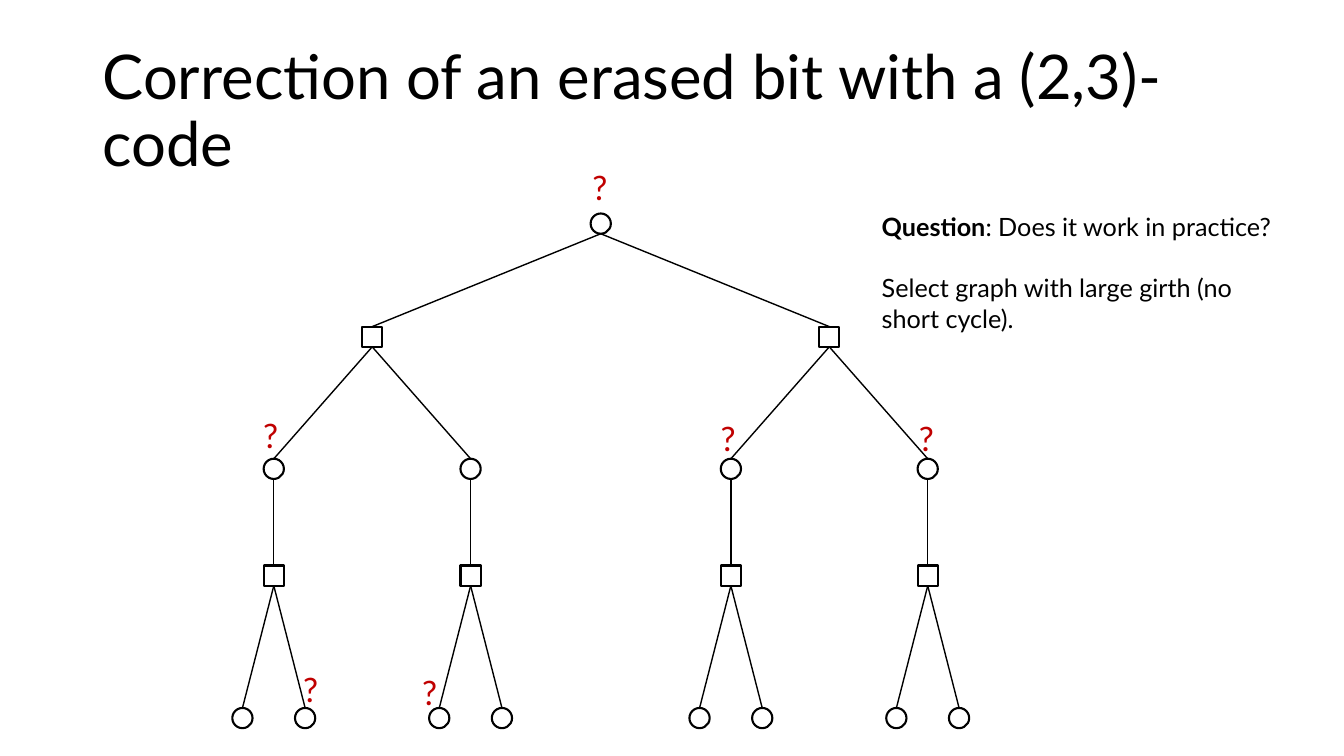
from lxml import etree
from pptx import Presentation
from pptx import util as u
from pptx.dml.color import RGBColor
from pptx.enum import shapes, text
from pptx.oxml.ns import qn

FONT = "Lato"
BLACK, WHITE, RED = "000000", "FFFFFF", "C00000"
NODE_SIZE = 0.51
CIRCLE, SQUARE = shapes.MSO_SHAPE.OVAL, shapes.MSO_SHAPE.RECTANGLE

# Tree levels from the root: node shape, top, horizontal offsets from the parent
LEVELS = [
    (CIRCLE, 5.38, [0]),
    (SQUARE, 8.23, [-5.76, 5.76]),
    (CIRCLE, 11.56, [-2.48, 2.48]),
    (SQUARE, 14.25, [0]),
    (CIRCLE, 17.84, [-0.79, 0.79]),
]
ROOT_X = 15.14

# Left and top of the marks at the erased bits
ERASURES = [(14.68, 4.09), (6.38, 10.34), (17.91, 10.41),
            (22.91, 10.41), (7.39, 16.74), (10.39, 16.81)]


def rgb(colour):
    return RGBColor.from_string(colour)


def set_all(target, values):
    for name, value in values.items():
        setattr(target, name, value)


def add_run(paragraph, words, size, colour=BLACK, bold=False):
    run = paragraph.add_run()
    run.text = words
    set_all(run.font, {"name": FONT, "size": u.Pt(size), "bold": bold})
    run.font.color.rgb = rgb(colour)


def add_title(slide, words):
    title = slide.shapes.title
    set_all(title, {"left": u.Cm(2.33), "top": u.Cm(1.01),
                    "width": u.Cm(29.21), "height": u.Cm(3.68)})
    set_all(title.text_frame, {"vertical_anchor": text.MSO_ANCHOR.MIDDLE,
                               "auto_size": text.MSO_AUTO_SIZE.NONE,
                               "word_wrap": True})
    paragraph = title.text_frame.paragraphs[0]
    set_all(paragraph, {"alignment": text.PP_ALIGN.LEFT, "line_spacing": 0.9})
    add_run(paragraph, words, 44)


def add_text_box(slide, left, top, width, height, wrap):
    box = slide.shapes.add_textbox(u.Cm(left), u.Cm(top), u.Cm(width), u.Cm(height))
    set_all(box.text_frame, {"word_wrap": wrap,
                             "auto_size": text.MSO_AUTO_SIZE.SHAPE_TO_FIT_TEXT})
    return box.text_frame


def add_node(slide, kind, x, top):
    node = slide.shapes.add_shape(kind, u.Cm(x - NODE_SIZE / 2), u.Cm(top),
                                  u.Cm(NODE_SIZE), u.Cm(NODE_SIZE))
    node.shadow.inherit = False
    node.fill.solid()
    node.fill.fore_color.rgb = rgb(WHITE)
    node.line.color.rgb = rgb(BLACK)
    node.line.width = u.Pt(1.5)


def add_edge(slide, x1, y1, x2, y2):
    edge = slide.shapes.add_connector(shapes.MSO_CONNECTOR.STRAIGHT,
                                      u.Cm(x1), u.Cm(y1), u.Cm(x2), u.Cm(y2))
    edge.line.color.rgb = rgb(BLACK)
    edge.line.width = u.Pt(1)
    etree.SubElement(edge._element.spPr, qn("a:effectLst"))


def add_tree(slide, x, depth=0):
    kind, top, _ = LEVELS[depth]
    add_node(slide, kind, x, top)
    if depth + 1 < len(LEVELS):
        _, child_top, offsets = LEVELS[depth + 1]
        for offset in offsets:
            add_edge(slide, x, top + NODE_SIZE, x + offset, child_top)
            add_tree(slide, x + offset, depth + 1)


def add_question(slide):
    frame = add_text_box(slide, 21.97, 5.21, 10.8, 4.11, True)
    question = frame.paragraphs[0]
    add_run(question, "Question", 18, bold=True)
    add_run(question, ": Does it work in practice?", 18)
    answer = frame.add_paragraph()
    answer.space_before = u.Pt(22)
    add_run(answer, "Select graph with large girth (no short cycle).", 18)


def main():
    presentation = Presentation()
    set_all(presentation, {"slide_width": u.Cm(33.87), "slide_height": u.Cm(19.05)})
    slide = presentation.slides.add_slide(presentation.slide_layouts[5])

    add_title(slide, "Correction of an erased bit with a (2,3)-code")
    add_tree(slide, ROOT_X)

    # Erased bits
    for left, top in ERASURES:
        mark = add_text_box(slide, left, top, 0.91, 1.27, False)
        add_run(mark.paragraphs[0], "?", 24, RED)

    add_question(slide)
    presentation.save("out.pptx")


if __name__ == "__main__":
    main()
